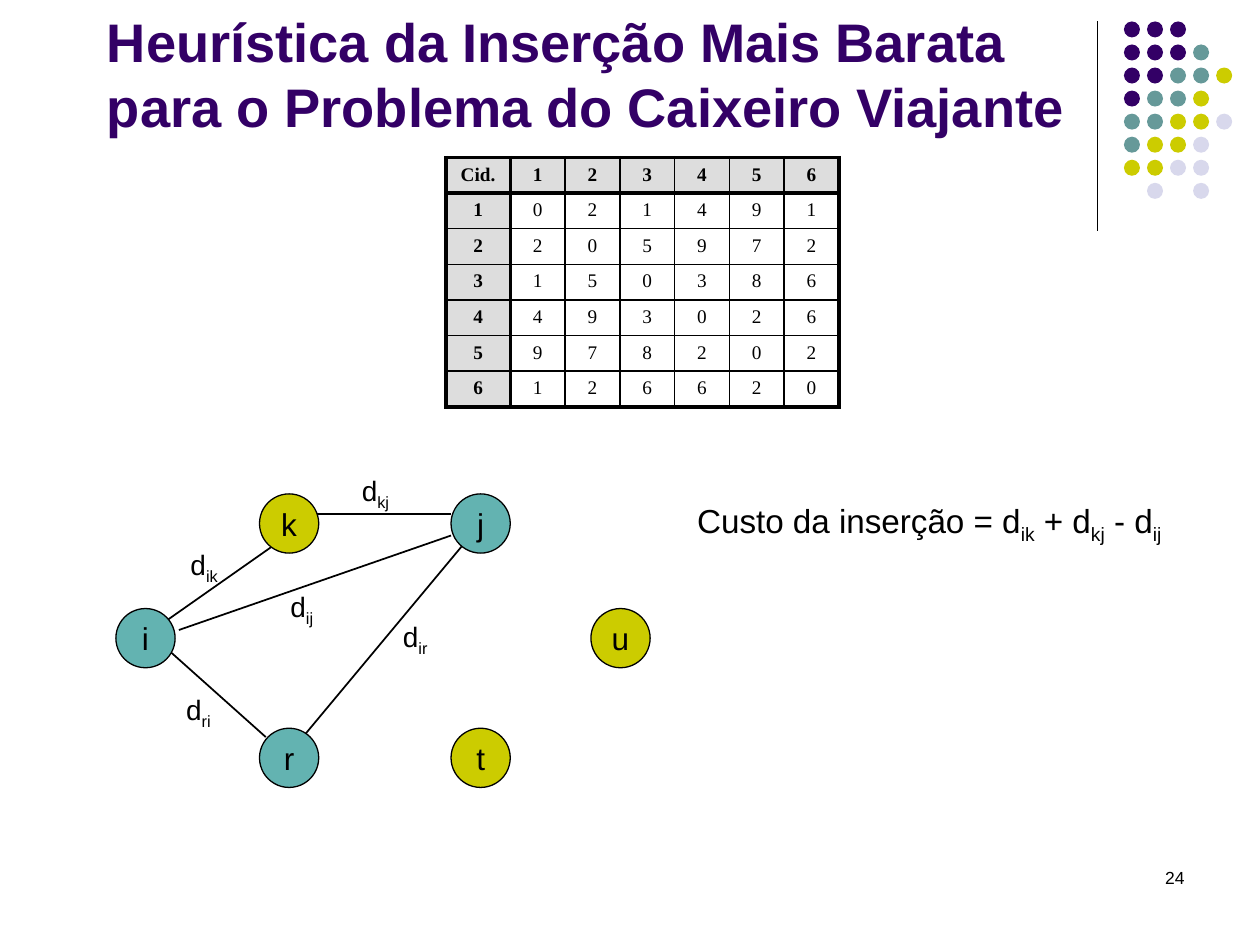
from pptx import Presentation
from pptx.dml.color import RGBColor
from pptx.enum.shapes import MSO_CONNECTOR, MSO_SHAPE
from pptx.enum.text import MSO_ANCHOR, PP_ALIGN
from pptx.oxml import parse_xml
from pptx.oxml.ns import nsdecls
from pptx.util import Inches, Pt

OVAL, STRAIGHT = MSO_SHAPE.OVAL, MSO_CONNECTOR.STRAIGHT
LEFT, CENTER, RIGHT = PP_ALIGN.LEFT, PP_ALIGN.CENTER, PP_ALIGN.RIGHT
TOP, MIDDLE, BOTTOM = MSO_ANCHOR.TOP, MSO_ANCHOR.MIDDLE, MSO_ANCHOR.BOTTOM

THEME = {
    "font": "Arial", "table font": "Times New Roman",
    "ink": "000000", "header": "DDDDDD", "node": "63B3B1",
    "purple": "330066", "teal": "669999", "lime": "CCCC00", "pale": "D8D8EC",
    "title size": 31, "cost size": 19, "node size": 18, "label size": 16,
    "cell size": 11, "number size": 10,
}
INK = RGBColor.from_string(THEME["ink"])

prs = Presentation()
prs.slide_width, prs.slide_height = Inches(10), Inches(7.5)
s = prs.slides.add_slide(prs.slide_layouts[6])
UNIT = prs.slide_width / 100  # the grid has 100 columns and 75 rows


def grid(*cells):
    """Turn grid columns and rows into slide lengths."""
    return [round(c * UNIT) for c in cells]


def write(tf, parts, size, align=CENTER, color="ink", bold=False, font="font"):
    """Add runs to the first paragraph; every second one is a subscript."""
    p = tf.paragraphs[0]
    p.alignment = align
    for i, part in enumerate(parts):
        r = p.add_run()
        r.text = part
        r.font.name, r.font.size, r.font.bold = THEME[font], Pt(THEME[size]), bold
        r.font.color.rgb = RGBColor.from_string(THEME[color])
        if i % 2:
            r._r.get_or_add_rPr().set("baseline", "-25000")


# Lines: the rule beside the title, then the edges of the graph
LINES = [
    (87.1, 1.7, 87.1, 18.3, 0.75),
    (14.2, 50, 35.8, 42.5, 1),
    (36.7, 43.3, 24.2, 58.3, 1),
    (13.6, 51.8, 21.1, 58.5, 1),
    (13.3, 49.2, 21.7, 43.3, 1),
    (25, 40.8, 35.8, 40.8, 1),
]
for x1, y1, x2, y2, weight in LINES:
    line = s.shapes.add_connector(STRAIGHT, *grid(x1, y1, x2, y2))
    line.line.color.rgb = INK
    line.line.width = Pt(weight)
    line._element.spPr.append(parse_xml(f"<a:effectLst {nsdecls('a')}/>"))

# Dot ornament: one letter per dot, named after its colour
DOT_ROWS = ["PPP", "PPPT", "PPTTL", "PTTL", "TTLLW", "TLLW", "LLWW", " W W"]
DOT_COLORS = {"P": "purple", "T": "teal", "L": "lime", "W": "pale"}
DOT, DOT_STEP = 1.27, 1.83
for row, dots in enumerate(DOT_ROWS):
    for col, letter in enumerate(dots):
        if letter == " ":
            continue
        dot = s.shapes.add_shape(OVAL, *grid(89.2 + col * DOT_STEP, 1.7 + row * DOT_STEP, DOT, DOT))
        dot.shadow.inherit = False
        dot.fill.solid()
        dot.fill.fore_color.rgb = RGBColor.from_string(THEME[DOT_COLORS[letter]])
        dot.line.fill.background()

# Graph nodes
NODES = [
    ("k", 20.6, 39.2, "lime"), ("t", 35.8, 57.8, "lime"), ("u", 46.9, 48.3, "lime"),
    ("j", 35.8, 39.2, "node"), ("r", 20.6, 57.8, "node"), ("i", 9.2, 48.3, "node"),
]
for name, x, y, color in NODES:
    node = s.shapes.add_shape(OVAL, *grid(x, y, 4.7, 4.7))
    node.shadow.inherit = False
    node.fill.solid()
    node.fill.fore_color.rgb = RGBColor.from_string(THEME[color])
    node.line.color.rgb = INK
    node.line.width = Pt(0.75)
    tf = node.text_frame
    tf.word_wrap, tf.vertical_anchor = False, MIDDLE
    write(tf, [name], "node size")

# Distance table between the cities
DISTANCES = ["021491", "205972", "150386", "493026", "978202", "126620"]
rows = [["Cid.", *"123456"]] + [[str(i), *d] for i, d in enumerate(DISTANCES, 1)]
n = len(rows)
TABLE_W, TABLE_H, FIRST_COL = 31.2, 19.8, 5.1
table = s.shapes.add_table(n, n, *grid(35.4, 12.5, TABLE_W, TABLE_H)).table
table.first_row = table.horz_banding = False
for i in range(n):
    table.rows[i].height = grid(TABLE_H / n)[0]
    table.columns[i].width = grid((TABLE_W - FIRST_COL) / (n - 1) if i else FIRST_COL)[0]
for i, values in enumerate(rows):
    for j, value in enumerate(values):
        cell = table.cell(i, j)
        is_header = i == 0 or j == 0
        # Thick lines frame the table and set off the headers
        thick = {"L": j < 2, "R": j in (0, n - 1), "T": i < 2, "B": i in (0, n - 1)}
        for side, is_thick in thick.items():
            cell._tc.get_or_add_tcPr().append(parse_xml(
                f'<a:ln{side} {nsdecls("a")} w="{Pt(2.25 if is_thick else 1)}">'
                f'<a:solidFill><a:srgbClr val="{THEME["ink"]}"/></a:solidFill></a:ln{side}>'))
        if is_header:
            cell.fill.solid()
            cell.fill.fore_color.rgb = RGBColor.from_string(THEME["header"])
        else:
            cell.fill.background()
        write(cell.text_frame, [value], "cell size", bold=is_header, font="table font")

# Edge labels
LABELS = [
    ("ij", 22, 46.3, 3.9), ("ir", 30.9, 48.7, 4.1), ("ri", 13.7, 54.5, 4.1),
    ("ik", 14, 43, 4.4), ("kj", 27.6, 37.1, 4.4),
]
for edge, x, y, width in LABELS:
    tf = s.shapes.add_textbox(*grid(x, y, width, 3.7)).text_frame
    tf.word_wrap = False
    write(tf, ["d", edge], "label size")

# Title, insertion cost and slide number
TITLE = "Heurística da Inserção Mais Barata para o Problema do Caixeiro Viajante"
COST = ["Custo da inserção = d", "ik", " + d", "kj", " - d", "ij"]
TEXTS = [
    ((7.5, 4.5, 79.2, 7), BOTTOM, [TITLE], "title size", LEFT, "purple", True),
    ((52.5, 39.2, 42.5, 4.2), TOP, COST, "cost size", CENTER, "ink", False),
    ((71.7, 68.3, 23.3, 5), TOP, ["24"], "number size", RIGHT, "ink", False),
]
for place, anchor, parts, size, align, color, bold in TEXTS:
    tf = s.shapes.add_textbox(*grid(*place)).text_frame
    tf.word_wrap, tf.vertical_anchor = True, anchor
    write(tf, parts, size, align, color, bold)

prs.save("out.pptx")
